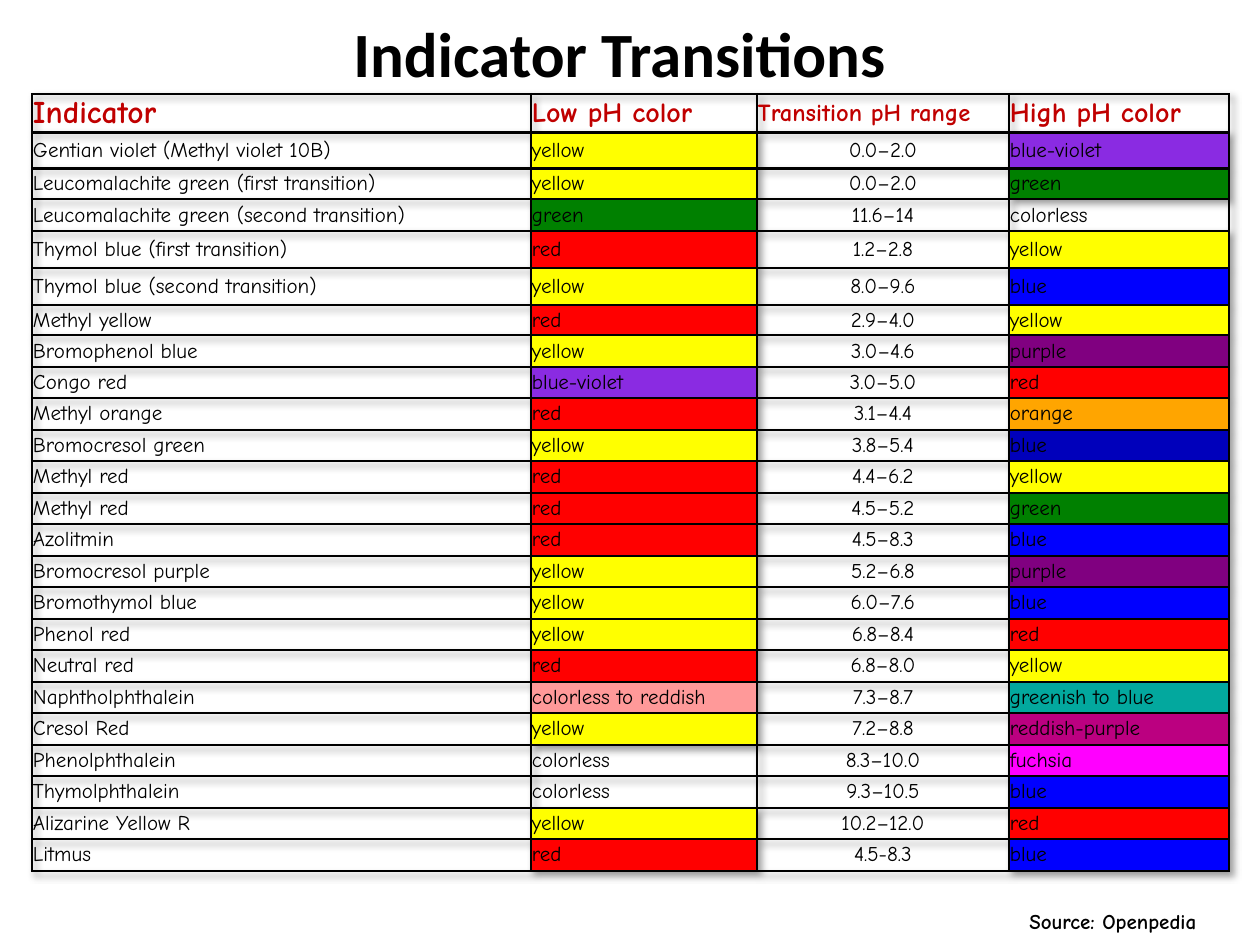
from dataclasses import dataclass
from typing import Optional

from lxml import etree
from pptx import Presentation
from pptx.dml.color import RGBColor
from pptx.enum.text import MSO_ANCHOR, MSO_AUTO_SIZE, PP_ALIGN
from pptx.oxml.ns import qn
from pptx.util import Emu, Pt

LEFT, CENTER = PP_ALIGN.LEFT, PP_ALIGN.CENTER
MIDDLE = MSO_ANCHOR.MIDDLE
FIT_SHAPE = MSO_AUTO_SIZE.SHAPE_TO_FIT_TEXT
TITLE_ONLY = 5
EMU_PER_PX = 914400 / 126
BODY_FONT = "Comic Neue"

COLORS = {
    "text": "000000",
    "header": "C00000",
    "yellow": "FFFF00",
    "green": "008000",
    "red": "FF0000",
    "blue": "0000FF",
    "dark blue": "0000BB",
    "purple": "800080",
    "blue-violet": "8A2BE2",
    "orange": "FFA500",
    "colorless to reddish": "FF9999",
    "greenish to blue": "03A89E",
    "reddish-purple": "BB0080",
    "fuchsia": "FF00FF",
}


@dataclass
class Indicator:
    name: str
    low: str
    ph_range: str
    high: str
    high_fill: Optional[str] = None


HEADERS = [
    ("Indicator", 18),
    ("Low pH color", 16),
    ("Transition pH range", 14),
    ("High pH color", 16),
]
INDICATORS = [
    Indicator("Gentian violet (Methyl violet 10B)", "yellow", "0.0–2.0", "blue-violet"),
    Indicator("Leucomalachite green (first transition)", "yellow", "0.0–2.0", "green"),
    Indicator("Leucomalachite green (second transition)", "green", "11.6–14", "colorless"),
    Indicator("Thymol blue (first transition)", "red", "1.2–2.8", "yellow"),
    Indicator("Thymol blue (second transition)", "yellow", "8.0–9.6", "blue"),
    Indicator("Methyl yellow", "red", "2.9–4.0", "yellow"),
    Indicator("Bromophenol blue", "yellow", "3.0–4.6", "purple"),
    Indicator("Congo red", "blue-violet", "3.0–5.0", "red"),
    Indicator("Methyl orange", "red", "3.1–4.4", "orange"),
    Indicator("Bromocresol green", "yellow", "3.8–5.4", "blue", "dark blue"),
    Indicator("Methyl red", "red", "4.4–6.2", "yellow"),
    Indicator("Methyl red", "red", "4.5–5.2", "green"),
    Indicator("Azolitmin", "red", "4.5–8.3", "blue"),
    Indicator("Bromocresol purple", "yellow", "5.2–6.8", "purple"),
    Indicator("Bromothymol blue", "yellow", "6.0–7.6", "blue"),
    Indicator("Phenol red", "yellow", "6.8–8.4", "red"),
    Indicator("Neutral red", "red", "6.8–8.0", "yellow"),
    Indicator("Naphtholphthalein", "colorless to reddish", "7.3–8.7", "greenish to blue"),
    Indicator("Cresol Red", "yellow", "7.2–8.8", "reddish-purple"),
    Indicator("Phenolphthalein", "colorless", "8.3–10.0", "fuchsia"),
    Indicator("Thymolphthalein", "colorless", "9.3–10.5", "blue"),
    Indicator("Alizarine Yellow R", "yellow", "10.2–12.0", "red"),
    Indicator("Litmus", "red", "4.5-8.3", "blue"),
]
COL_WIDTHS = [499, 226, 252, 220]
ROW_HEIGHTS = [38, 36, 31, 32, 37, 37, 30] + [32, 31] * 8 + [32]


def px(n: int) -> Emu:
    return Emu(round(n * EMU_PER_PX))


def set_attrs(obj, values: dict) -> None:
    for key, value in values.items():
        setattr(obj, key, value)


def write(tf, text: str, size: int, font: str = BODY_FONT, color: str = "text",
          bold: bool = False, align=LEFT) -> None:
    p = tf.paragraphs[0]
    p.alignment = align
    r = p.add_run()
    r.text = text
    set_attrs(r.font, {"name": font, "size": Pt(size), "bold": bold})
    r.font.color.rgb = RGBColor.from_string(COLORS[color])


def add_borders(cell) -> None:
    tc_pr = cell._tc.get_or_add_tcPr()
    for side in ("a:lnL", "a:lnR", "a:lnT", "a:lnB"):
        ln = etree.SubElement(tc_pr, qn(side), w=str(Pt(1.5)))
        fill = etree.SubElement(ln, qn("a:solidFill"))
        etree.SubElement(fill, qn("a:srgbClr"), val=COLORS["text"])


def add_shadow(table) -> None:
    effects = etree.Element(qn("a:effectLst"))
    shadow = etree.SubElement(effects, qn("a:outerShdw"), blurRad="50800", dist="38100",
                              dir="2700000", algn="tl", rotWithShape="0")
    color = etree.SubElement(shadow, qn("a:srgbClr"), val=COLORS["text"])
    etree.SubElement(color, qn("a:alpha"), val="40000")
    table._tbl.tblPr.insert(0, effects)


def draw_cell(cell, text: str, size: int, fill: Optional[str] = None, **style) -> None:
    margins = ("margin_left", "margin_right", "margin_top", "margin_bottom")
    set_attrs(cell, {"vertical_anchor": MIDDLE, **dict.fromkeys(margins, px(1))})
    add_borders(cell)
    if fill in COLORS:
        cell.fill.solid()
        cell.fill.fore_color.rgb = RGBColor.from_string(COLORS[fill])
    else:
        cell.fill.background()
    write(cell.text_frame, text, size, **style)


def draw_indicator(table, row: int, item: Indicator) -> None:
    draw_cell(table.cell(row, 0), item.name, 12)
    draw_cell(table.cell(row, 1), item.low, 12, item.low)
    draw_cell(table.cell(row, 2), item.ph_range, 12, align=CENTER)
    draw_cell(table.cell(row, 3), item.high, 12, item.high_fill or item.high)


def draw_table(s) -> None:
    table = s.shapes.add_table(len(ROW_HEIGHTS), len(COL_WIDTHS), px(32), px(94),
                               px(sum(COL_WIDTHS)), px(sum(ROW_HEIGHTS))).table
    set_attrs(table, {"first_row": False, "horz_banding": False})
    add_shadow(table)
    for col, width in zip(table.columns, COL_WIDTHS):
        col.width = px(width)
    for row, height in zip(table.rows, ROW_HEIGHTS):
        row.height = px(height)
    for col, (text, size) in enumerate(HEADERS):
        draw_cell(table.cell(0, col), text, size, color="header", bold=True)
    for row, item in enumerate(INDICATORS, start=1):
        draw_indicator(table, row, item)


def main() -> None:
    prs = Presentation()
    set_attrs(prs, {"slide_width": px(1260), "slide_height": px(945)})
    s = prs.slides.add_slide(prs.slide_layouts[TITLE_ONLY])

    title = s.shapes.title
    set_attrs(title, {"left": px(84), "top": px(0), "width": px(1071), "height": px(105)})
    title.text_frame.vertical_anchor = MIDDLE
    write(title.text_frame, "Indicator Transitions", 36, "Calibri", bold=True, align=CENTER)

    draw_table(s)

    source = s.shapes.add_textbox(px(1017), px(902), px(213), px(38))
    set_attrs(source.text_frame, {"word_wrap": False, "auto_size": FIT_SHAPE})
    write(source.text_frame, "Source: Openpedia", 12, bold=True)

    prs.save("out.pptx")


if __name__ == "__main__":
    main()
